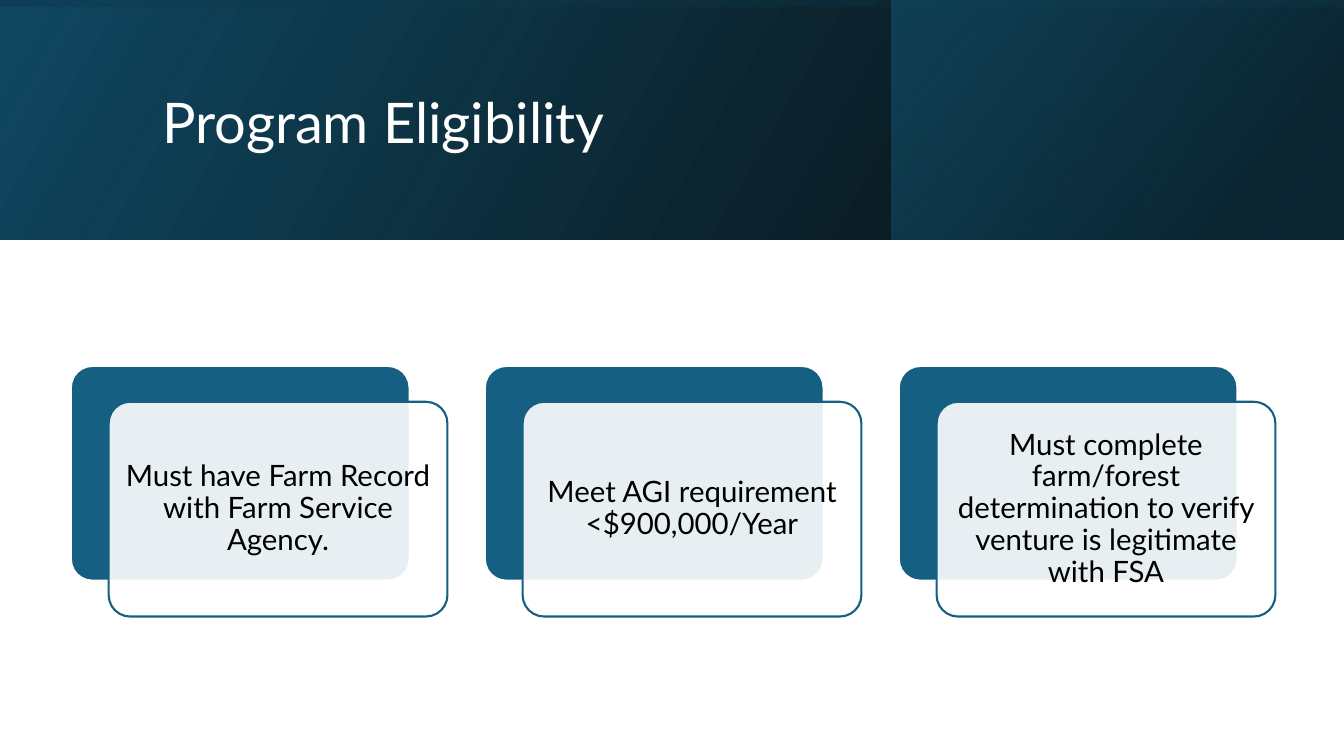
from lxml.etree import SubElement
from pptx import Presentation
from pptx.dml.color import RGBColor
from pptx.enum.shapes import MSO_SHAPE as Shape
from pptx.enum.text import MSO_ANCHOR as Anchor, PP_ALIGN as Align
from pptx.oxml.ns import qn
from pptx.util import Pt

DARK_BLUE = "104862"
BLUE = "156082"
BLACK = "000000"
WHITE = "FFFFFF"
FONT = "Lato"
REQUIREMENTS = [
    "Must have Farm Record with Farm Service Agency.",
    "Meet AGI requirement <$900,000/Year",
    "Must complete farm/forest determination to verify venture is legitimate with FSA",
]


def color(value):
    return RGBColor.from_string(value)


def set_alphas(shape, alphas):
    for tone, alpha in zip(shape.element.spPr.iter(qn("a:srgbClr")), alphas):
        SubElement(tone, qn("a:alpha")).set("val", str(alpha * 1000))


def add_shade(slide, left, top, width, height, stops, angle, rotation=0):
    shade = slide.shapes.add_shape(
        Shape.RECTANGLE, Pt(left), Pt(top), Pt(width), Pt(height))
    shade.shadow.inherit = False
    shade.line.fill.background()
    shade.rotation = rotation
    shade.element.spPr.xfrm.set("flipH", "1")
    shade.fill.gradient()
    shade.fill.gradient_angle = angle
    for stop, (position, tone, _) in zip(shade.fill.gradient_stops, stops):
        stop.position = position
        stop.color.rgb = color(tone)
    set_alphas(shade, [alpha for _, _, alpha in stops])


def add_header(slide, width, height):
    accent_width = 323
    add_shade(slide, 0, 0, width, height,
              [(0, BLACK, 96), (1, DARK_BLUE, 100)], 30)
    add_shade(slide, width - accent_width, 0, accent_width, height,
              [(0.19, "0B3041", 68), (1, BLUE, 48)], 40)
    add_shade(slide, (width - height) / 2, (height - width) / 2, height, width,
              [(0.23, DARK_BLUE, 16), (0.99, BLACK, 45)], 10, 270)

    title = slide.shapes.title
    title.left, title.top = Pt(108.7), Pt(27.4)
    title.width, title.height = Pt(765.4), Pt(123.8)
    title.text_frame.text = "Program Eligibility"
    title.text_frame.vertical_anchor = Anchor.MIDDLE
    heading = title.text_frame.paragraphs[0]
    heading.alignment = Align.LEFT
    heading.line_spacing = 0.9
    heading.font.name = FONT
    heading.font.size = Pt(40)
    heading.font.color.rgb = color(WHITE)
    slide.shapes._spTree.append(title.element)


def add_panel(slide, left, top, width, height, fill, outline):
    panel = slide.shapes.add_shape(
        Shape.ROUNDED_RECTANGLE, Pt(left), Pt(top), Pt(width), Pt(height))
    panel.shadow.inherit = False
    panel.adjustments[0] = 0.1
    panel.fill.solid()
    panel.fill.fore_color.rgb = color(fill)
    panel.line.color.rgb = color(outline)
    panel.line.width = Pt(1.5)
    return panel


def add_card(slide, left, top, width, height, requirement):
    add_panel(slide, left, top, width, height, BLUE, WHITE)
    front = add_panel(slide, left + 27, top + 25.6, width, height, WHITE, BLUE)
    set_alphas(front, [90])
    frame = front.text_frame
    frame.word_wrap = True
    frame.vertical_anchor = Anchor.MIDDLE
    frame.margin_left = frame.margin_right = Pt(6.3)
    frame.margin_top = frame.margin_bottom = Pt(6.3)
    frame.text = requirement
    statement = frame.paragraphs[0]
    statement.alignment = Align.CENTER
    statement.line_spacing = 0.9
    statement.font.name = FONT
    statement.font.size = Pt(21)
    statement.font.color.rgb = color(BLACK)


def add_cards(slide, left, top, width, height, gap):
    for index, requirement in enumerate(REQUIREMENTS):
        add_card(slide, left + index * (width + gap), top, width, height, requirement)


def main():
    deck = Presentation()
    deck.slide_width, deck.slide_height = Pt(960), Pt(540)
    slide = deck.slides.add_slide(deck.slide_layouts[5])
    add_header(slide, 960, 170.8)
    add_cards(slide, 50.6, 261.4, 242, 153.4, 53.7)
    deck.save("out.pptx")


if __name__ == "__main__":
    main()
